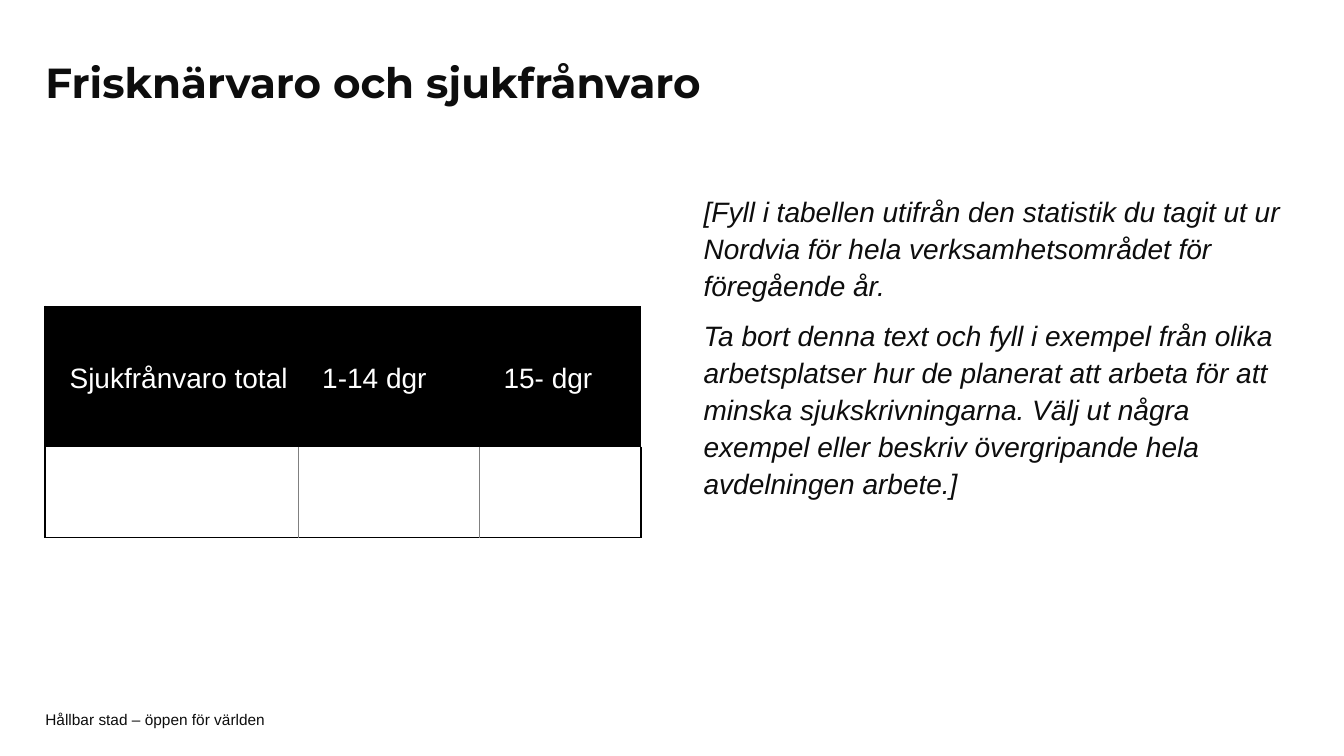
from dataclasses import dataclass
from typing import Any

from lxml import etree
from pptx import Presentation
from pptx.dml.color import RGBColor
from pptx.enum.text import MSO_ANCHOR, MSO_AUTO_SIZE, PP_ALIGN
from pptx.oxml.ns import qn
from pptx.util import Pt

MIDDLE, TOP = MSO_ANCHOR.MIDDLE, MSO_ANCHOR.TOP
LEFT = PP_ALIGN.LEFT
FIXED = MSO_AUTO_SIZE.NONE


@dataclass(frozen=True)
class Theme:
    ink: str = "0D0D0D"
    black: str = "000000"
    white: str = "FFFFFF"
    gray: str = "808080"
    head: str = "Montserrat"
    text: str = "Arial"
    big: float = 30
    mid: float = 20
    small: float = 11
    thick: float = 1.5
    thin: float = 0.5


THEME = Theme()


@dataclass(frozen=True)
class Style:
    font: str
    size: float
    color: str = THEME.ink
    bold: bool = False
    italic: bool = False
    line: float = 1.0
    before: float = 0
    after: float = 0


@dataclass(frozen=True)
class Block:
    box: tuple[float, float, float, float]
    lines: tuple[str, ...]
    style: Style
    anchor: Any = TOP
    pad: float = 0


TITLE = Block(
    (32.4, 31.7, 722.2, 58.3), ("Frisknärvaro och sjukfrånvaro",),
    Style(THEME.head, THEME.big, bold=True, line=0.9), MIDDLE, 3.6)
NOTE = Block(
    (502.6, 136.8, 425.5, 329),
    ("[Fyll i tabellen utifrån den statistik du tagit ut ur Nordvia "
     "för hela verksamhetsområdet för föregående år.",
     "Ta bort denna text och fyll i exempel från olika arbetsplatser hur "
     "de planerat att arbeta för att minska sjukskrivningarna. Välj ut några "
     "exempel eller beskriv övergripande hela avdelningen arbete.]"),
    Style(THEME.text, THEME.mid, italic=True, line=1.1, before=6, after=3))
FOOT = Block(
    (32.4, 508.3, 680.4, 11.5), ("Hållbar stad – öppen för världen",),
    Style(THEME.text, THEME.small), MIDDLE)

LABELS = ("Sjukfrånvaro total", "1-14 dgr", "15- dgr")
LABEL = Style(THEME.text, THEME.mid, THEME.white, line=1.15, after=8)
WIDTHS = (180.5, 129.5, 115.5)
HEIGHTS = (100, 65)
EDGE = (THEME.black, THEME.thick)
RULE = (THEME.gray, THEME.thin)


def write(frame: Any, lines: tuple[str, ...], style: Style) -> None:
    frame.text = "\n".join(lines)
    for rank, para in enumerate(frame.paragraphs):
        para.alignment = LEFT
        para.line_spacing = style.line
        para.space_before = Pt(style.before if rank else 0)
        para.space_after = Pt(style.after)
        for run in para.runs:
            font = run.font
            font.name, font.size = style.font, Pt(style.size)
            font.bold, font.italic = style.bold, style.italic
            font.color.rgb = RGBColor.from_string(style.color)


def place(shape: Any, block: Block) -> None:
    shape.left, shape.top, shape.width, shape.height = map(Pt, block.box)
    frame = shape.text_frame
    frame.word_wrap, frame.auto_size = True, FIXED
    frame.vertical_anchor = block.anchor
    frame.margin_left = frame.margin_right = 0
    frame.margin_top = frame.margin_bottom = Pt(block.pad)
    write(frame, block.lines, block.style)


def border(cell: Any, sides: dict[str, tuple[str, float] | None]) -> None:
    props = cell._tc.get_or_add_tcPr()
    for side, pen in sides.items():
        line = etree.SubElement(props, qn(f"a:ln{side}"))
        if pen is None:
            etree.SubElement(line, qn("a:noFill"))
            continue
        color, width = pen
        line.set("w", str(Pt(width)))
        fill = etree.SubElement(line, qn("a:solidFill"))
        etree.SubElement(fill, qn("a:srgbClr")).set("val", color)


def draw_table(slide: Any) -> None:
    table = slide.shapes.add_table(
        len(HEIGHTS), len(WIDTHS), Pt(32.4), Pt(219),
        Pt(sum(WIDTHS)), Pt(sum(HEIGHTS))).table
    table.first_row = table.horz_banding = False
    for row, height in zip(table.rows, HEIGHTS):
        row.height = Pt(height)
    last = len(WIDTHS) - 1
    for col, (label, width) in enumerate(zip(LABELS, WIDTHS)):
        table.columns[col].width = Pt(width)
        top, low = table.cell(0, col), table.cell(1, col)
        border(top, {"L": None if col else EDGE, "R": None,
                     "T": EDGE, "B": None})
        top.fill.solid()
        top.fill.fore_color.rgb = RGBColor.from_string(THEME.black)
        top.vertical_anchor = MIDDLE
        top.margin_left, top.margin_right = Pt(17.3), Pt(2.9)
        top.margin_top = top.margin_bottom = Pt(13)
        write(top.text_frame, (label,), LABEL)
        border(low, {"L": RULE if col else EDGE,
                     "R": RULE if col < last else EDGE,
                     "T": None, "B": EDGE})
        low.fill.background()


def main() -> None:
    deck = Presentation()
    deck.slide_width, deck.slide_height = Pt(960), Pt(540)
    slide = deck.slides.add_slide(deck.slide_layouts[5])
    place(slide.shapes.title, TITLE)
    for block in (NOTE, FOOT):
        place(slide.shapes.add_textbox(*map(Pt, block.box)), block)
    draw_table(slide)
    deck.save("out.pptx")


if __name__ == "__main__":
    main()
